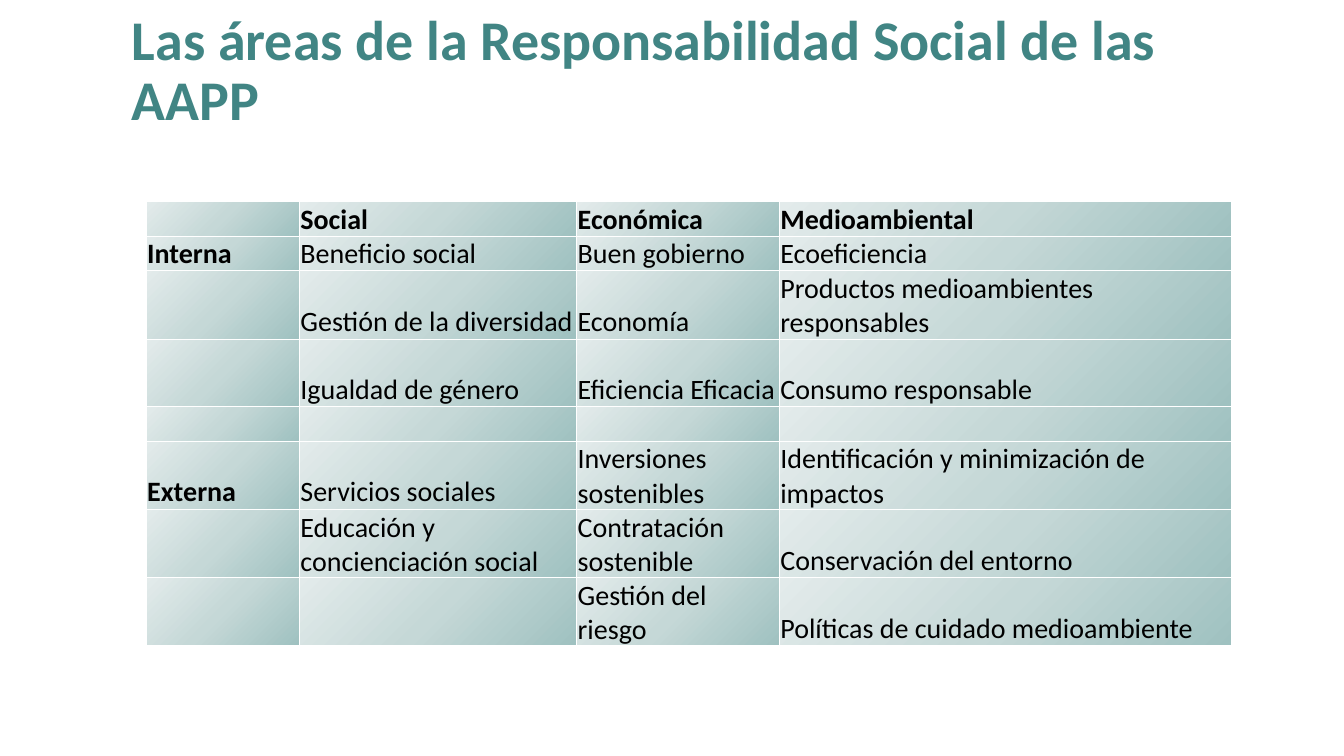
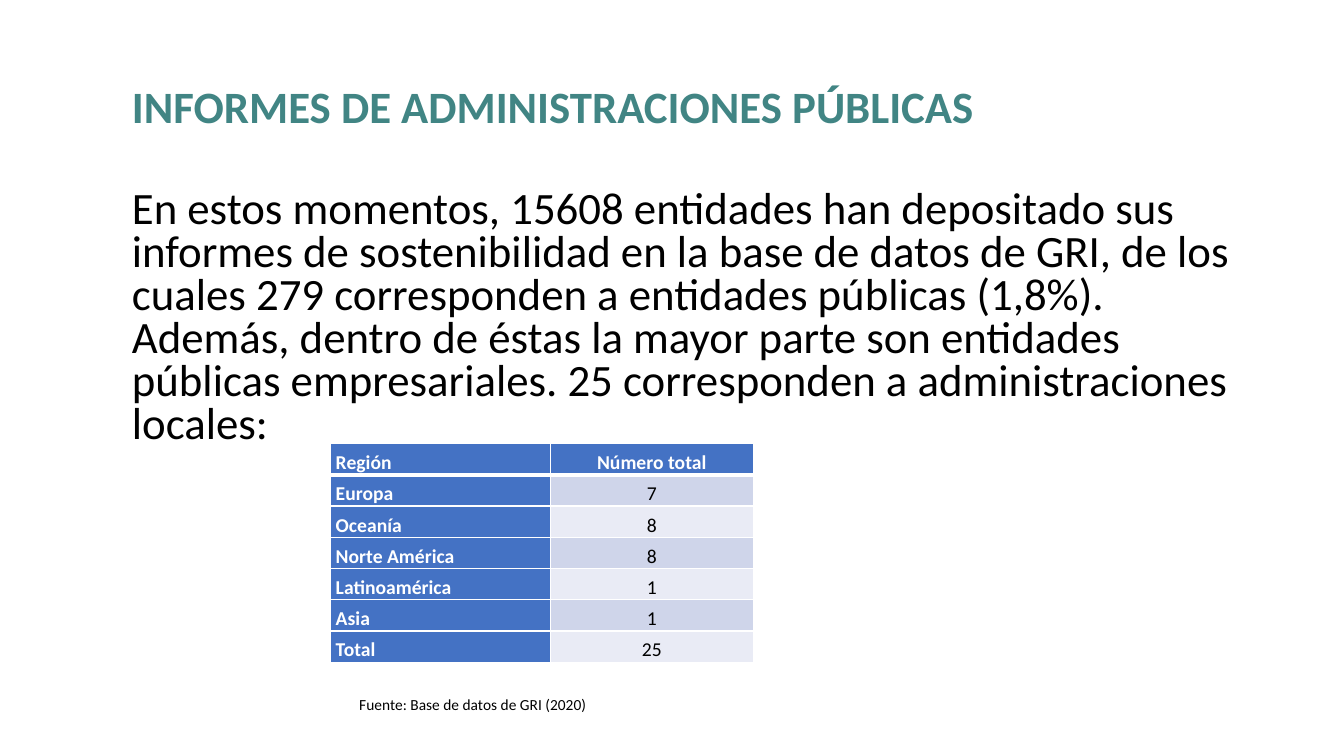
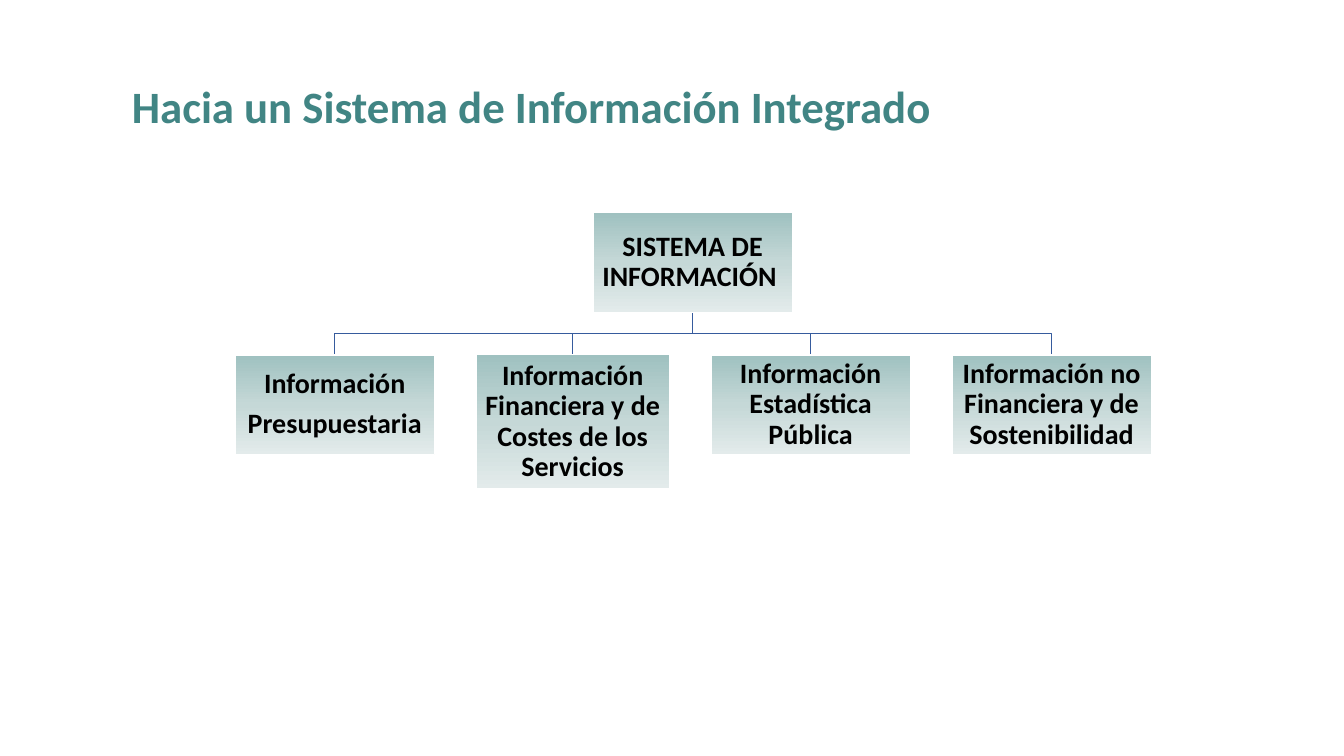
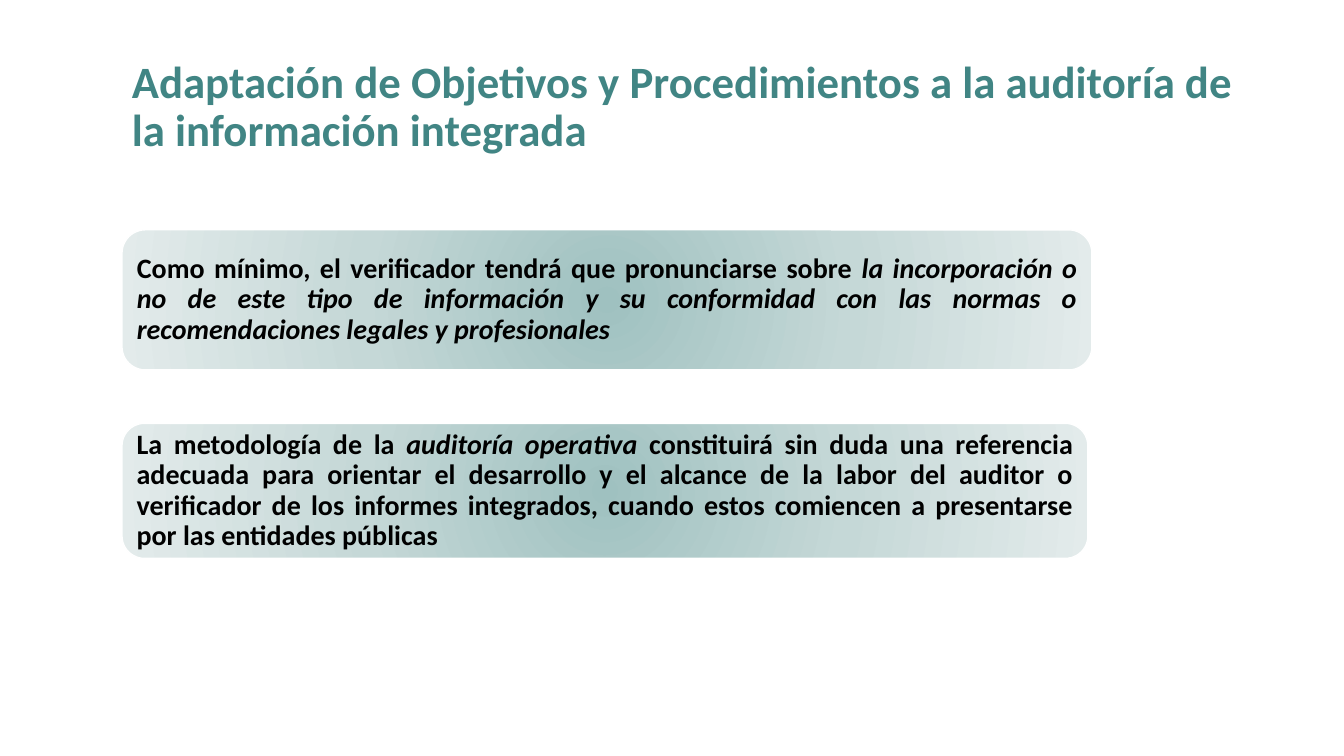
from dataclasses import dataclass

from lxml import etree
from pptx import Presentation
from pptx.dml.color import RGBColor
from pptx.enum.shapes import MSO_SHAPE
from pptx.enum.text import MSO_ANCHOR, PP_ALIGN
from pptx.oxml import parse_xml
from pptx.oxml.ns import nsdecls, qn
from pptx.util import Emu, Pt

RECTANGLE = MSO_SHAPE.RECTANGLE
ROUNDED = MSO_SHAPE.ROUNDED_RECTANGLE
TOP, MIDDLE, BOTTOM = MSO_ANCHOR.TOP, MSO_ANCHOR.MIDDLE, MSO_ANCHOR.BOTTOM
LEFT, CENTER, JUSTIFY = PP_ALIGN.LEFT, PP_ALIGN.CENTER, PP_ALIGN.JUSTIFY

PX = 9144
BLANK_LAYOUT = 6
SIDES = ("left", "top", "right", "bottom")

DOWNWARD = '<a:lin ang="5400000" scaled="0"/>'
FROM_CORNER = '<a:path path="circle"><a:fillToRect l="100000" t="100000"/></a:path>'
FROM_CENTER = (
    '<a:path path="circle">'
    '<a:fillToRect l="50000" t="50000" r="50000" b="50000"/></a:path>'
)


@dataclass(frozen=True)
class Theme:
    font: str = "Calibri"
    title: str = "418584"
    text: str = "000000"
    white: str = "FFFFFF"
    header: str = "4472C4"
    bands: tuple = ("CFD5EA", "E9EBF5")
    connector: str = "365B9D"
    gradient: tuple = ((0, "9FC1C0"), (50, "C5D8D7"), (100, "E3EBEB"))
    title_large: int = 40
    title_size: int = 32
    body_size: int = 32
    content_size: int = 20
    data_size: int = 14
    source_size: int = 11
    line: int = 1
    header_line: int = 3


def px(length):
    return Emu(length * PX)


def set_values(target, values):
    for name, value in values.items():
        setattr(target, name, value)


def margins(*lengths):
    return {f"margin_{side}": px(length) for side, length in zip(SIDES, lengths)}


class Deck:
    def __init__(self, theme):
        self.theme = theme
        self.presentation = Presentation()
        set_values(self.presentation, {"slide_width": px(1333), "slide_height": px(750)})
        self.slide = None

    def new_slide(self, title, size=None, height=66, align=LEFT):
        layout = self.presentation.slide_layouts[BLANK_LAYOUT]
        self.slide = self.presentation.slides.add_slide(layout)
        self.text_box(
            (121, 71, 1132, height), title, size or self.theme.title_size,
            anchor=BOTTOM, color=self.theme.title, bold=True, align=align, spacing=0.9,
        )

    def fill_text(self, frame, paragraphs, size, color=None, bold=False,
                  align=LEFT, spacing=1.0, after=0):
        if isinstance(paragraphs, str):
            paragraphs = [paragraphs]
        for index, content in enumerate(paragraphs):
            paragraph = frame.add_paragraph() if index else frame.paragraphs[0]
            set_values(paragraph, {
                "alignment": align, "line_spacing": spacing, "space_after": Pt(after),
            })
            runs = [(content, False)] if isinstance(content, str) else content
            for text, italic in runs:
                run = paragraph.add_run()
                run.text = text
                set_values(run.font, {
                    "name": self.theme.font, "size": Pt(size),
                    "bold": bold, "italic": italic,
                })
                run.font.color.rgb = RGBColor.from_string(color or self.theme.text)

    def text_box(self, box, paragraphs, size, anchor=TOP, wrap=True, **style):
        shape = self.slide.shapes.add_textbox(*map(px, box))
        set_values(shape.text_frame, {"word_wrap": wrap, "vertical_anchor": anchor})
        self.fill_text(shape.text_frame, paragraphs, size, **style)

    def gradient(self, fill, properties, direction):
        fill.gradient()
        stops = "".join(
            f'<a:gs pos="{position * 1000}"><a:srgbClr val="{color}"/></a:gs>'
            for position, color in self.theme.gradient
        )
        properties.replace(properties.find(qn("a:gradFill")), parse_xml(
            f'<a:gradFill {nsdecls("a")} rotWithShape="1">'
            f"<a:gsLst>{stops}</a:gsLst>{direction}</a:gradFill>"
        ))

    def stroke(self, shape, color):
        shape.shadow.inherit = False
        shape.line.color.rgb = RGBColor.from_string(color)
        shape.line.width = Pt(self.theme.line)

    def panel(self, kind, box, paragraphs, direction, margin, align):
        shape = self.slide.shapes.add_shape(kind, *map(px, box))
        self.gradient(shape.fill, shape.element.spPr, direction)
        self.stroke(shape, self.theme.white)
        set_values(shape.text_frame, {
            "word_wrap": True, "vertical_anchor": MIDDLE, **margins(*[margin] * 4),
        })
        self.fill_text(shape.text_frame, paragraphs, self.theme.content_size,
                       bold=True, align=align, spacing=0.9, after=7)

    def branch(self, start, end):
        middle = (start[1] + end[1]) // 2
        builder = self.slide.shapes.build_freeform(*start, scale=PX)
        builder.add_line_segments(
            [(start[0], middle), (end[0], middle), end], close=False
        )
        shape = builder.convert_to_shape()
        shape.fill.background()
        self.stroke(shape, self.theme.connector)

    def borders(self, cell, top, bottom):
        properties = cell._tc.get_or_add_tcPr()
        widths = {"L": self.theme.line, "R": self.theme.line, "T": top, "B": bottom}
        for index, (side, width) in enumerate(widths.items()):
            properties.insert(index, parse_xml(
                f'<a:ln{side} {nsdecls("a")} w="{int(Pt(width))}"><a:solidFill>'
                f'<a:srgbClr val="{self.theme.white}"/></a:solidFill></a:ln{side}>'
            ))

    def table(self, origin, columns, heights, rows, insets, size, style_cell,
              header_line):
        frame = self.slide.shapes.add_table(
            len(rows), len(columns), *map(px, (*origin, sum(columns), sum(heights)))
        )
        table = frame.table
        set_values(table, {"first_row": False, "horz_banding": False})
        for column, width in zip(table.columns, columns):
            column.width = px(width)
        for row, height in zip(table.rows, heights):
            row.height = px(height)
        for row_index, row in enumerate(rows):
            for column_index, text in enumerate(row):
                cell = table.cell(row_index, column_index)
                set_values(cell, {"vertical_anchor": BOTTOM, **margins(*insets)})
                style = style_cell(cell, row_index, column_index)
                self.borders(
                    cell,
                    header_line if row_index == 1 else self.theme.line,
                    header_line if row_index == 0 else self.theme.line,
                )
                if text:
                    self.fill_text(cell.text_frame, text, size, **style)
                else:
                    paragraph = cell.text_frame.paragraphs[0]
                    etree.SubElement(paragraph._p, qn("a:endParaRPr"), sz=str(size * 100))

    def area_cell(self, cell, row, column):
        self.gradient(cell.fill, cell._tc.get_or_add_tcPr(), FROM_CORNER)
        return {"bold": row == 0 or column == 0}

    def region_cell(self, cell, row, column):
        heading = row == 0 or column == 0
        color = self.theme.header if heading else self.theme.bands[(row - 1) % 2]
        cell.fill.solid()
        cell.fill.fore_color.rgb = RGBColor.from_string(color)
        return {
            "bold": heading,
            "color": self.theme.white if heading else self.theme.text,
            "align": CENTER if column else LEFT,
            "spacing": 1.15,
        }


AREAS = [
    ("", "Social", "Económica", "Medioambiental"),
    ("Interna", "Beneficio social", "Buen gobierno", "Ecoeficiencia"),
    ("", "Gestión de la diversidad", "Economía", "Productos medioambientes responsables"),
    ("", "Igualdad de género", "Eficiencia Eficacia", "Consumo responsable"),
    ("", "", "", ""),
    ("Externa", "Servicios sociales", "Inversiones sostenibles",
     "Identificación y minimización de impactos"),
    ("", "Educación y concienciación social", "Contratación sostenible",
     "Conservación del entorno"),
    ("", "", "Gestión del riesgo", "Políticas de cuidado medioambiente"),
]

REGIONS = [
    ("Región", "Número total"),
    ("Europa", "7"),
    ("Oceanía", "8"),
    ("Norte América", "8"),
    ("Latinoamérica", "1"),
    ("Asia", "1"),
    ("Total", "25"),
]

REPORTS_TEXT = (
    "En estos momentos, 15608 entidades han depositado sus informes de sostenibilidad "
    "en la base de datos de GRI, de los cuales 279 corresponden a entidades públicas "
    "(1,8%). Además, dentro de éstas la mayor parte son entidades públicas "
    "empresariales. 25 corresponden a administraciones locales:"
)

SUBSYSTEMS = [
    (198, 99, ["Información", "Presupuestaria"]),
    (192, 133, "Información Financiera y de Costes de los Servicios"),
    (198, 99, "Información Estadística Pública"),
    (198, 99, "Información no Financiera y de Sostenibilidad"),
]

AUDIT_PANELS = [
    ((121, 228, 962, 139), [
        ("Como mínimo, el verificador tendrá que pronunciarse sobre ", False),
        ("la incorporación o no de este tipo de información y su conformidad con las "
         "normas o recomendaciones legales y profesionales", True),
    ]),
    ((121, 420, 958, 134), [
        ("La metodología de la ", False),
        ("auditoría operativa ", True),
        ("constituirá sin duda una referencia adecuada para orientar el desarrollo y "
         "el alcance de la labor del auditor o verificador de los informes integrados, "
         "cuando estos comiencen a presentarse por las entidades públicas", False),
    ]),
]


def areas_slide(deck):
    theme = deck.theme
    deck.new_slide("Las áreas de la Responsabilidad Social de las AAPP", theme.title_large)
    deck.table((145, 200), (152, 275, 201, 449), (34, 34, 67, 67, 34, 67, 67, 67),
               AREAS, (1, 1, 1, 0), theme.content_size, deck.area_cell, theme.line)


def reports_slide(deck):
    theme = deck.theme
    deck.new_slide("INFORMES DE ADMINISTRACIONES PÚBLICAS")
    deck.text_box((121, 184, 1132, 272), REPORTS_TEXT, theme.body_size, spacing=0.8)
    deck.table((328, 440), (218, 201), [31] * len(REGIONS), REGIONS, (5, 0, 5, 0),
               theme.data_size, deck.region_cell, theme.header_line)
    deck.text_box((345, 684, 248, 29), "Fuente: Base de datos de GRI (2020)",
                  theme.source_size, anchor=MIDDLE, wrap=False, align=CENTER)


def system_slide(deck):
    deck.new_slide("Hacia un Sistema de Información Integrado", align=JUSTIFY)
    root = (588, 211, 198, 99)
    trunk = (root[0] + root[2] // 2, root[1] + root[3])
    panels = [(root, "SISTEMA DE INFORMACIÓN ")]
    left, top, gap = 233, 352, 41
    for width, height, label in SUBSYSTEMS:
        deck.branch(trunk, (left + width // 2, top))
        panels.append(((left, top, width, height), label))
        left += width + gap
    for box, label in panels:
        deck.panel(RECTANGLE, box, label, DOWNWARD, 1, CENTER)


def audit_slide(deck):
    deck.new_slide(
        "Adaptación de Objetivos y Procedimientos a la auditoría de la información integrada",
        height=89,
    )
    for box, runs in AUDIT_PANELS:
        deck.panel(ROUNDED, box, [runs], FROM_CENTER, 8, JUSTIFY)


def main():
    deck = Deck(Theme())
    for build in (areas_slide, reports_slide, system_slide, audit_slide):
        build(deck)
    deck.presentation.save("out.pptx")


if __name__ == "__main__":
    main()
